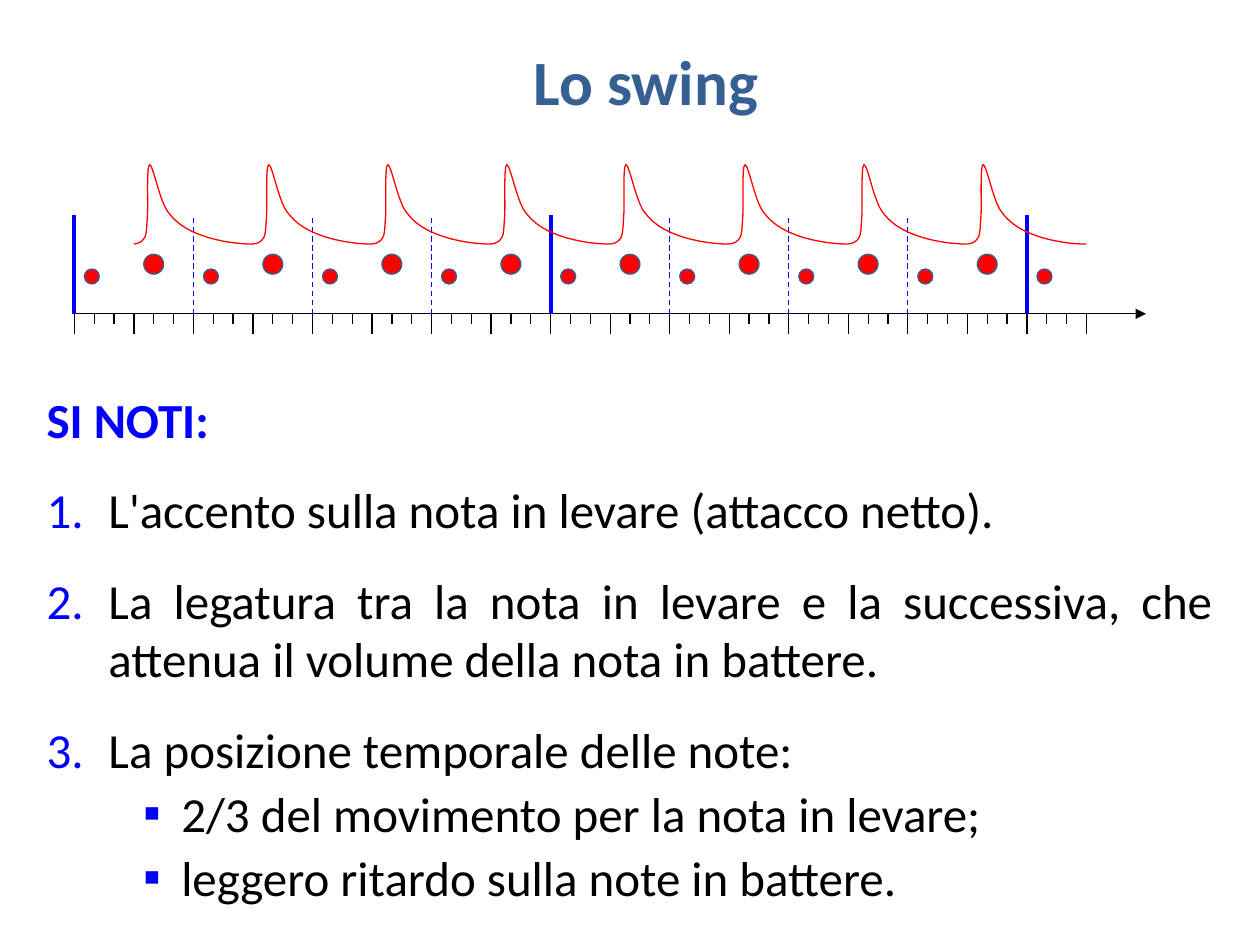
from lxml.etree import SubElement
from pptx import Presentation
from pptx.dml.color import RGBColor
from pptx.enum.dml import MSO_LINE_DASH_STYLE as Dash
from pptx.enum.shapes import MSO_CONNECTOR as Connector, MSO_SHAPE as Shape
from pptx.enum.text import MSO_AUTO_SIZE as AutoSize, PP_ALIGN as Align
from pptx.oxml.ns import qn
from pptx.util import Pt

COLORS = {"title": "376092", "accent": "0000FF", "text": "000000",
          "note": "FF0000", "note_edge": "3A5F8C"}

LEFT, AXIS_Y = 42.5, 179.3
TICK = 11.34               # a third of half a beat
BEAT = 6 * TICK
BAR_HEIGHT = 5 * TICK
BEATS = 8
CURVE_Y = 139.5

# Attack and decay of one accented note: triples of Bezier points from its start
ENVELOPE = [
    (3.4, -0.5), (5, -1.5), (6.5, -4.3),
    (7.4, -7.2), (7.3, -9.4), (7.8, -16.6),
    (8.2, -23), (7.2, -44.6), (9, -45.4),
    (11, -45.4), (14.6, -25.2), (19.3, -18.7),
    (24.3, -11.7), (30.6, -8), (38.8, -5),
    (47, -2), (58.4, 0), (BEAT, 0),
]

NUMBERED = {"margin": 35.4, "indent": -35.4, "before": 18,
            "bullet": ("buAutoNum", {"type": "arabicPeriod"})}
SQUARE = {"margin": 77, "indent": -21.6, "before": 3, "level": 1,
          "bullet": ("buChar", {"char": "▪"})}
NOTES = [
    ("SI NOTI:", {"bold": True, "color": "accent"}),
    ("L'accento sulla nota in levare (attacco netto).", NUMBERED),
    ("La legatura tra la nota in levare e la successiva, che attenua il "
     "volume della nota in battere.", NUMBERED),
    ("La posizione temporale delle note:", NUMBERED),
    ("2/3 del movimento per la nota in levare;", SQUARE),
    ("leggero ritardo sulla note in battere.", SQUARE),
]


class SlideBuilder:
    font_name = "Calibri"

    def __init__(self, slide):
        self.slide = slide
        self.diagram = slide.shapes.add_group_shape().shapes

    def color(self, name):
        return RGBColor.from_string(COLORS[name])

    def stroke(self, shape, color, width=0.75):
        shape.line.color.rgb = self.color(color)
        shape.line.width = Pt(width)

    def line(self, start, end, color="text", width=0.75, dashed=False, arrow=False):
        ends = [Pt(value) for value in (*start, *end)]
        connector = self.diagram.add_connector(Connector.STRAIGHT, *ends)
        self.stroke(connector, color, width)
        if dashed:
            connector.line.dash_style = Dash.DASH
        if arrow:
            SubElement(connector.line._get_or_add_ln(), qn("a:tailEnd"), type="triangle")
        SubElement(connector._element.spPr, qn("a:effectLst"))

    def dot(self, center_x, center_y, size):
        corner = Pt(center_x - size / 2), Pt(center_y - size / 2)
        shape = self.diagram.add_shape(Shape.OVAL, *corner, Pt(size), Pt(size))
        shape.shadow.inherit = False
        shape.fill.solid()
        shape.fill.fore_color.rgb = self.color("note")
        self.stroke(shape, "note_edge")

    def curve(self, x, y, offsets, color):
        """Draw an open outline, then turn each three segments into one Bezier."""
        builder = self.diagram.build_freeform(Pt(x), Pt(y))
        builder.add_line_segments([(Pt(x + dx), Pt(y + dy)) for dx, dy in offsets],
                                  close=False)
        shape = builder.convert_to_shape()
        shape.shadow.inherit = False
        shape.fill.background()
        self.stroke(shape, color)
        outline = next(shape._element.iter(qn("a:path")))
        segments = outline.findall(qn("a:lnTo"))
        for first in range(0, len(segments), 3):
            bezier = SubElement(outline, qn("a:cubicBezTo"))
            for segment in segments[first:first + 3]:
                bezier.append(segment[0])
                outline.remove(segment)

    def text(self, box, rows, size, align):
        shape = self.slide.shapes.add_textbox(*[Pt(value) for value in box])
        frame = shape.text_frame
        frame.word_wrap = True
        frame.auto_size = AutoSize.SHAPE_TO_FIT_TEXT
        for index, (words, style) in enumerate(rows):
            paragraph = frame.paragraphs[0] if index == 0 else frame.add_paragraph()
            paragraph.alignment = align
            paragraph.level = style.get("level", 0)
            run = paragraph.add_run()
            run.text = words
            font = {"name": self.font_name, "size": Pt(size),
                    "bold": style.get("bold", False)}
            for name, value in font.items():
                setattr(run.font, name, value)
            run.font.color.rgb = self.color(style.get("color", "text"))
            if "bullet" in style:
                self.bullet(paragraph, style)

    def bullet(self, paragraph, style):
        paragraph.space_before = Pt(style["before"])
        properties = paragraph._p.get_or_add_pPr()
        properties.set("marL", str(Pt(style["margin"])))
        properties.set("indent", str(Pt(style["indent"])))
        color = SubElement(properties, qn("a:buClr"))
        SubElement(color, qn("a:srgbClr"), val=COLORS["accent"])
        SubElement(properties, qn("a:buFont"), typeface=self.font_name)
        tag, attributes = style["bullet"]
        SubElement(properties, qn("a:" + tag), attributes)


def draw_time_axis(builder):
    builder.line((LEFT, AXIS_Y), (LEFT + 54 * TICK, AXIS_Y), arrow=True)
    for index in range(52):
        x = LEFT + index * TICK
        length = TICK if index % 3 == 0 else TICK / 2
        builder.line((x, AXIS_Y + length), (x, AXIS_Y))
    for beat in range(BEATS + 1):
        x = LEFT + beat * BEAT
        is_bar = beat % 4 == 0
        builder.line((x, AXIS_Y), (x, AXIS_Y - BAR_HEIGHT), "accent",
                     width=2.25 if is_bar else 0.75, dashed=not is_bar)


def draw_notes(builder):
    for beat in range(BEATS + 1):
        x = LEFT + beat * BEAT
        builder.dot(x + 10, 158, size=8.6)
        if beat < BEATS:
            builder.dot(x + 4 * TICK, 151, size=TICK)
            builder.curve(x + BEAT / 2, CURVE_Y, ENVELOPE, "note")


def main():
    presentation = Presentation()
    presentation.slide_width, presentation.slide_height = Pt(720), Pt(540)
    builder = SlideBuilder(presentation.slides.add_slide(presentation.slide_layouts[6]))
    title = [("Lo swing", {"bold": True, "color": "title"})]
    builder.text((72, 21, 594, 51), title, 36, Align.CENTER)
    draw_time_axis(builder)
    draw_notes(builder)
    builder.text((19.5, 219, 680.5, 305), NOTES, 28, Align.JUSTIFY)
    presentation.save("out.pptx")


if __name__ == "__main__":
    main()
